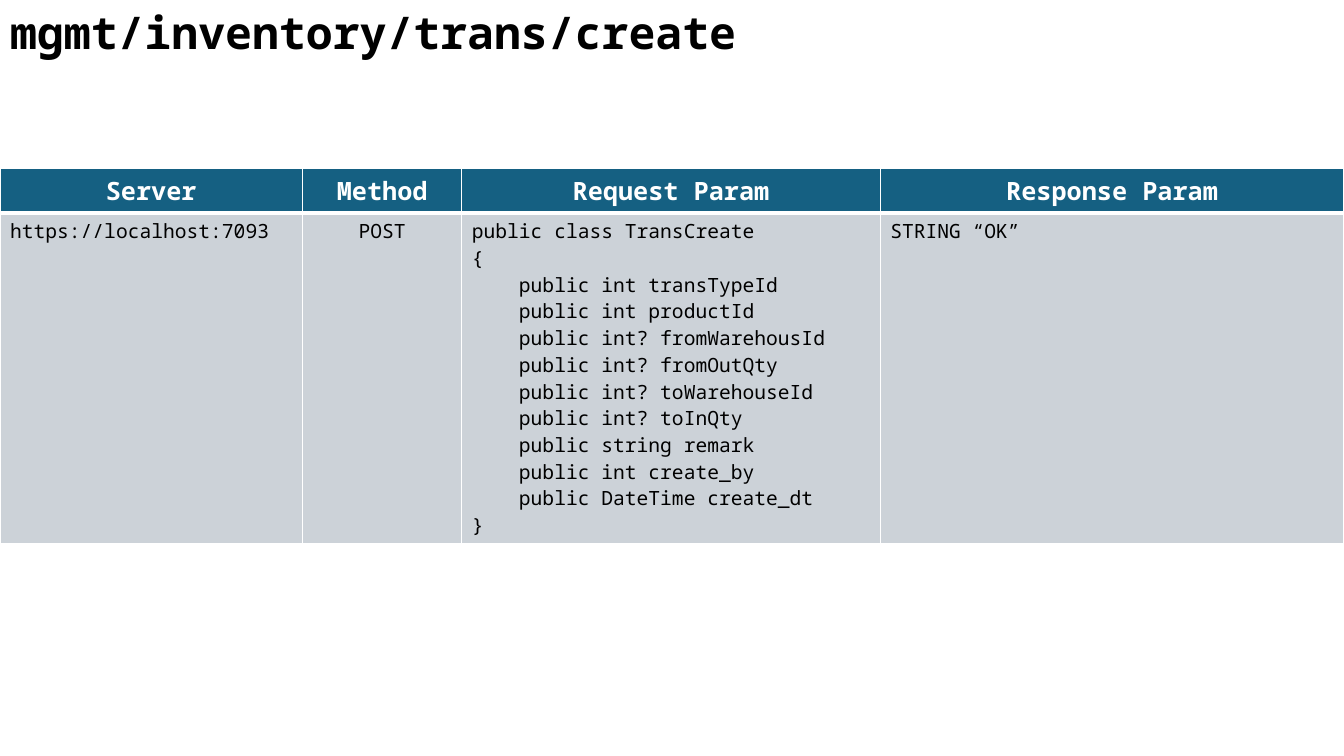
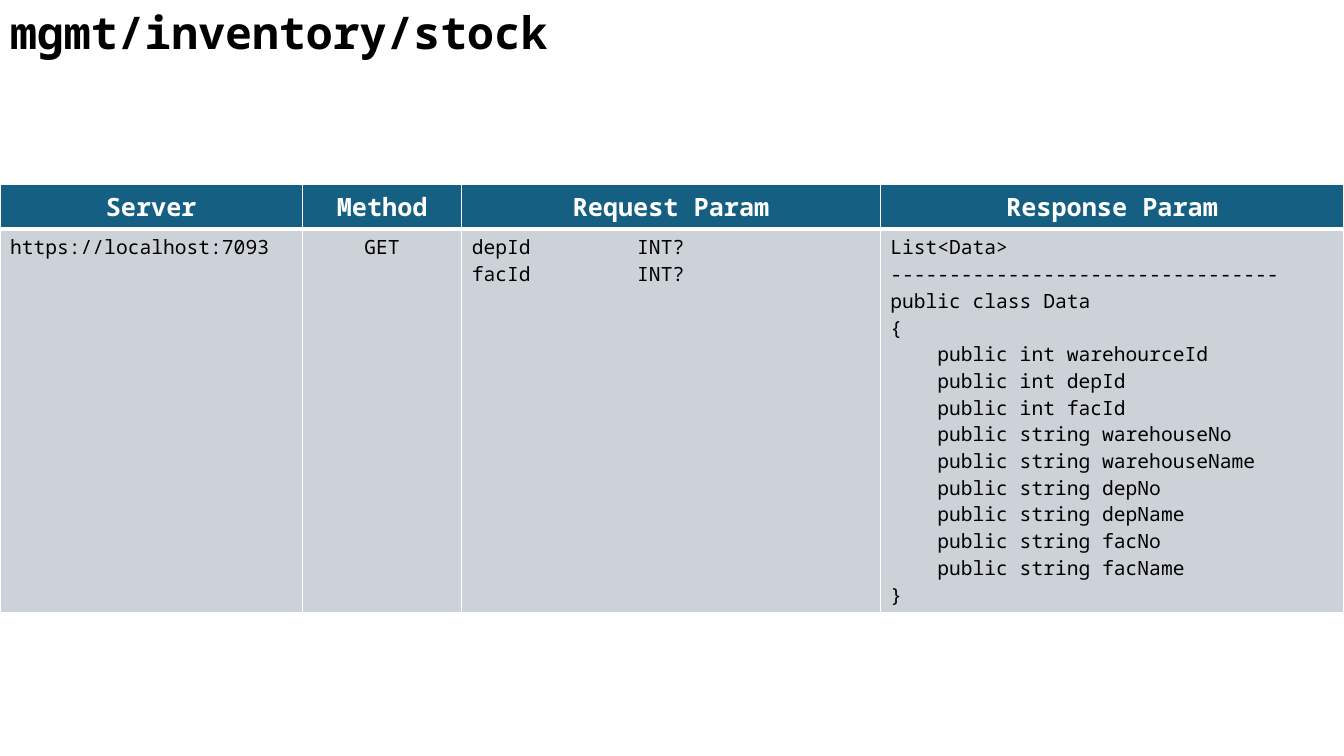
from lxml.etree import SubElement
from pptx import Presentation
from pptx.dml.color import RGBColor
from pptx.enum.text import MSO_ANCHOR, MSO_AUTO_SIZE, PP_ALIGN
from pptx.oxml.ns import qn
from pptx.util import Inches, Pt

FONT = "Noto Sans Mono"
COLORS = {"text": "000000", "header": "156082", "body": "CCD2D8", "line": "FFFFFF"}
WIDTH, HEIGHT = 13.33, 7.5
HEADINGS = ["Server", "Method", "Request Param", "Response Param"]
COLUMNS = [3, 1.58, 4.15]
COLUMNS.append(WIDTH - sum(COLUMNS))
HEADER_HEIGHT = 0.41
LINE_HEIGHT = 14 * 1.2 / 72
CELL_PADDING = 0.1
TAB_STOP = 1.64
SERVER = "https://localhost:7093"

ENDPOINTS = [
    {
        "title": "mgmt/inventory/trans/create",
        "title_width": 8.97,
        "top": 1.67,
        "method": "POST",
        "request": [
            "public class TransCreate",
            "{",
            "    public int transTypeId",
            "    public int productId",
            "    public int? fromWarehousId",
            "    public int? fromOutQty",
            "    public int? toWarehouseId",
            "    public int? toInQty",
            "    public string remark",
            "    public int create_by",
            "    public DateTime create_dt",
            "}",
        ],
        "response": ["STRING “OK”"],
    },
    {
        "title": "mgmt/inventory/stock",
        "title_width": 6.39,
        "top": 1.83,
        "method": "GET",
        "request": ["depId\tINT?", "facId\tINT?"],
        "response": [
            "List<Data>",
            "---------------------------------",
            "public class Data",
            "{",
            "    public int warehourceId",
            "    public int depId",
            "    public int facId",
            "    public string warehouseNo",
            "    public string warehouseName",
            "    public string depNo",
            "    public string depName",
            "    public string facNo",
            "    public string facName",
            "}",
        ],
    },
]


def write(text_frame, lines, size, color, bold, align):
    for index, line in enumerate(lines):
        paragraph = text_frame.paragraphs[0] if index == 0 else text_frame.add_paragraph()
        paragraph.alignment = align
        if "\t" in line:
            tabs = SubElement(paragraph._p.get_or_add_pPr(), qn("a:tabLst"))
            SubElement(tabs, qn("a:tab"), pos=str(Inches(TAB_STOP)), algn="l")
        run = paragraph.add_run()
        run.text = line
        run.font.name = FONT
        run.font.size = Pt(size)
        run.font.bold = bold
        run.font.color.rgb = RGBColor.from_string(COLORS[color])


def style_cell(cell, fill, bottom_width):
    """Draw the four borders, then the fill, in the order the schema asks for."""
    properties = cell._tc.get_or_add_tcPr()
    for side, width in (("L", 1), ("R", 1), ("T", 1), ("B", bottom_width)):
        border = SubElement(properties, qn(f"a:ln{side}"), w=str(Pt(width)))
        solid = SubElement(border, qn("a:solidFill"))
        SubElement(solid, qn("a:srgbClr"), val=COLORS["line"])
    cell.fill.solid()
    cell.fill.fore_color.rgb = RGBColor.from_string(COLORS[fill])


presentation = Presentation()
presentation.slide_width = Inches(WIDTH)
presentation.slide_height = Inches(HEIGHT)
title_only = presentation.slide_layouts[5]

for endpoint in ENDPOINTS:
    slide = presentation.slides.add_slide(title_only)

    title = slide.shapes.title
    title.left, title.top = 0, 0
    title.width, title.height = Inches(endpoint["title_width"]), Inches(0.64)
    title.text_frame.auto_size = MSO_AUTO_SIZE.NONE
    title.text_frame.vertical_anchor = MSO_ANCHOR.TOP
    write(title.text_frame, [endpoint["title"]], 32, "text", True, PP_ALIGN.LEFT)

    contents = [[SERVER], [endpoint["method"]], endpoint["request"], endpoint["response"]]
    body_height = max(map(len, contents)) * LINE_HEIGHT + CELL_PADDING
    table = slide.shapes.add_table(
        2, len(COLUMNS), 0, Inches(endpoint["top"]),
        Inches(WIDTH), Inches(HEADER_HEIGHT + body_height),
    ).table
    table.horz_banding = False
    table.rows[0].height = Inches(HEADER_HEIGHT)
    table.rows[1].height = Inches(body_height)

    for index, (heading, lines) in enumerate(zip(HEADINGS, contents)):
        table.columns[index].width = Inches(COLUMNS[index])
        header, body = table.cell(0, index), table.cell(1, index)
        style_cell(header, "header", 3)
        write(header.text_frame, [heading], 18, "line", True, PP_ALIGN.CENTER)
        style_cell(body, "body", 1)
        align = PP_ALIGN.CENTER if heading == "Method" else PP_ALIGN.LEFT
        write(body.text_frame, lines, 14, "text", False, align)

presentation.save("out.pptx")
